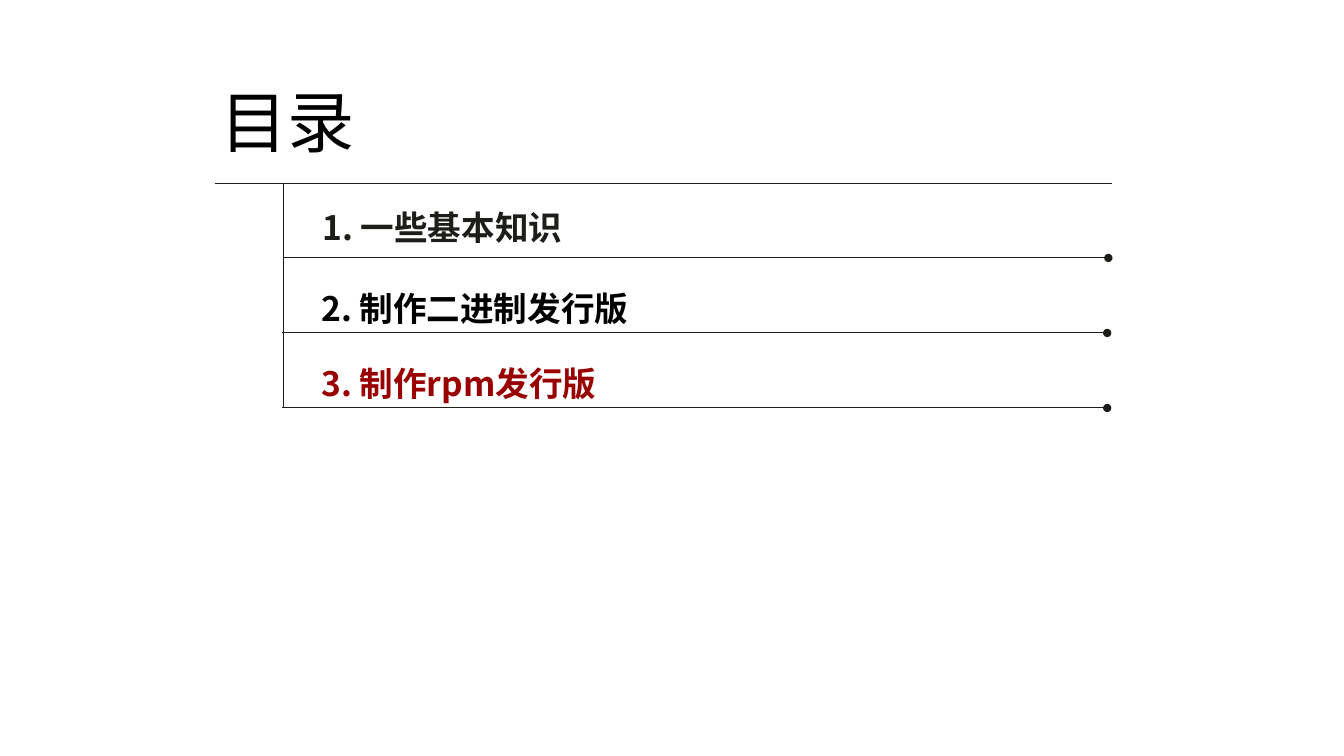
from pptx import Presentation
from pptx.dml.color import RGBColor
from pptx.enum.shapes import MSO_CONNECTOR as Connector
from pptx.enum.text import MSO_ANCHOR as Anchor
from pptx.oxml.ns import qn
from pptx.util import Cm, Pt
from lxml.etree import SubElement

INK = "1D1D1A"
RULE_TOP = 4.62
SPINE_LEFT = 7.14
FIRST_LINE = 6.5
LINE_STEP = 1.89


def color(value):
    return RGBColor.from_string(value)


class ContentsSlide:
    line_width = Pt(0.75)
    title_format = {"name": "Noto Sans CJK JP", "size": Pt(48)}
    item_format = {"name": "Noto Sans CJK SC", "size": Pt(24), "bold": True}

    def __init__(self, presentation):
        self.slide = presentation.slides.add_slide(presentation.slide_layouts[6])

    def line(self, left, top, right, bottom, dot=False):
        connector = self.slide.shapes.add_connector(
            Connector.STRAIGHT, Cm(left), Cm(top), Cm(right), Cm(bottom))
        connector.line.color.rgb = color(INK)
        connector.line.width = self.line_width
        properties = connector.line._get_or_add_ln()
        if dot:
            SubElement(properties, qn("a:tailEnd"), type="oval")
        SubElement(properties.getparent(), qn("a:effectLst"))

    def text(self, left, top, width, height, words, text_format, fill):
        box = self.slide.shapes.add_textbox(Cm(left), Cm(top), Cm(width), Cm(height))
        frame = box.text_frame
        frame.word_wrap = True
        frame.vertical_anchor = Anchor.MIDDLE
        run = frame.paragraphs[0].add_run()
        run.text = words
        for name, value in text_format.items():
            setattr(run.font, name, value)
        run.font.color.rgb = color(fill)
        SubElement(run._r.get_or_add_rPr(), qn("a:ea"), typeface=text_format["name"])


def main():
    presentation = Presentation()
    presentation.slide_width = Cm(33.88)
    presentation.slide_height = Cm(19.05)
    contents = ContentsSlide(presentation)

    items = [
        ("1. 一些基本知识", INK, 7.14, 1.42),
        ("2. 制作二进制发行版", "000000", 7.11, 1.27),
        ("3. 制作rpm发行版", "990000", 7.11, 1.27),
    ]
    last_line = FIRST_LINE + LINE_STEP * (len(items) - 1)

    contents.line(5.41, RULE_TOP, 28.02, RULE_TOP)
    contents.line(SPINE_LEFT, RULE_TOP, SPINE_LEFT, last_line)
    contents.text(5.31, 1.88, 15.24, 2.31, "目录", contents.title_format, "000000")
    for index, (words, fill, left, rise) in enumerate(items):
        top = FIRST_LINE + LINE_STEP * index
        contents.line(left, top, left + 20.8, top, dot=True)
        contents.text(left + 0.74, top - rise, 18.9, 1.27, words, contents.item_format, fill)

    presentation.save("out.pptx")


if __name__ == "__main__":
    main()
